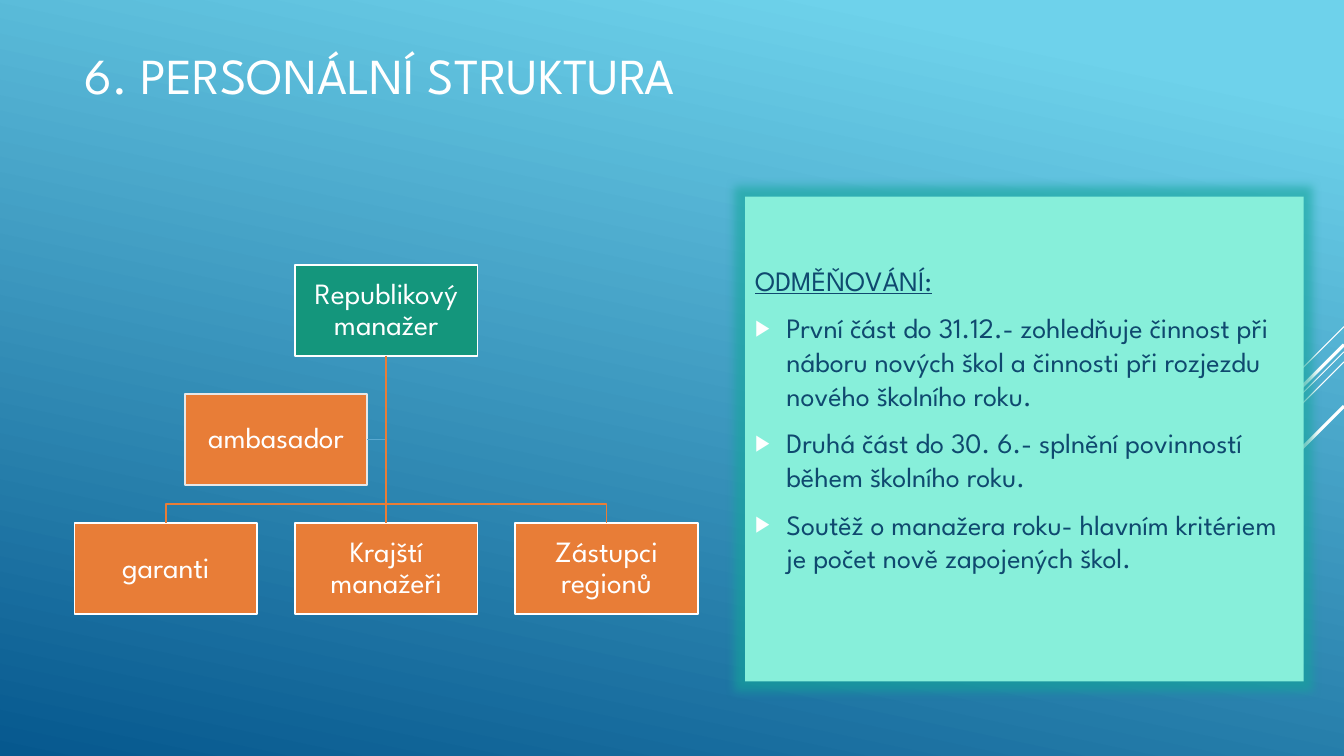
from lxml import etree
from pptx import Presentation
from pptx.dml.color import RGBColor
from pptx.enum.shapes import MSO_CONNECTOR, MSO_SHAPE
from pptx.enum.text import MSO_ANCHOR, MSO_AUTO_SIZE, PP_ALIGN
from pptx.oxml.ns import qn
from pptx.util import Emu, Inches, Pt

STRAIGHT = MSO_CONNECTOR.STRAIGHT
RECT = MSO_SHAPE.RECTANGLE
MIDDLE = MSO_ANCHOR.MIDDLE
LEFT, CENTER = PP_ALIGN.LEFT, PP_ALIGN.CENTER
NO_FIT = MSO_AUTO_SIZE.NONE
TOP, LEFT_SIDE, BOTTOM, RIGHT_SIDE = range(4)

FONT = "League Spartan"
COLORS = {
    "sky": "6ED2EB", "deep": "06588E", "white": "FFFFFF", "pale": "E7E7E7",
    "orange": "E87D37", "green": "14967C", "mint": "87EFDA",
    "navy": "0F496F", "stub": "5AA9D0", "glow": "14A69A",
}
RAYS = [
    (3.24, 1.0, 0.75), (3.49, 3.26, 0.75), (3.59, 2.07, 0.75),
    (3.42, 1.91, 2.25), (4.03, 1.39, 2.25),
]
REWARDS = [
    "ODMĚŇOVÁNÍ:",
    "První část do 31.12.- zohledňuje činnost při náboru nových škol "
    "a činnosti při rozjezdu nového školního roku.",
    "Druhá část do 30. 6.- splnění povinností během školního roku.",
    "Soutěž o manažera roku- hlavním kritériem je počet nově zapojených škol.",
]


def rgb(name):
    """Return the named palette colour."""
    return RGBColor.from_string(COLORS[name])


def sub(parent, tag, **attrs):
    """Append an XML child with the given attributes."""
    el = etree.SubElement(parent, qn(tag))
    for key, value in attrs.items():
        el.set(key, value)
    return el


def style_text(p, size, color):
    """Format every run of a paragraph."""
    for r in p.runs:
        r.font.name = FONT
        r.font.size = Pt(size)
        r.font.color.rgb = rgb(color)


def style_line(s, color, width):
    """Set the colour and width of an outline."""
    s.line.color.rgb = rgb(color)
    s.line.width = Pt(width)


def add_line(slide, start, end, color, width):
    """Draw a straight connector without a shadow."""
    s = slide.shapes.add_connector(STRAIGHT, *start, *end)
    style_line(s, color, width)
    sub(s._element.spPr, "a:effectLst")
    return s


def place_on_top(slide, s, x, y, w, h):
    """Move a placeholder to a box, in front of everything drawn so far."""
    s.left, s.top, s.width, s.height = x, y, w, h
    slide.shapes._spTree.append(s._element)


def add_background(slide, right):
    """Fill the background and draw diagonal rays from the right edge."""
    fill = slide.background.fill
    fill.gradient()
    fill.gradient_angle = 258
    for stop, color, pos in zip(fill.gradient_stops, ("sky", "deep"), (0.1, 1)):
        stop.color.rgb = rgb(color)
        stop.position = pos
    for y, reach, width in RAYS:
        add_line(slide, (right, Inches(y)),
                 (right - Inches(reach), Inches(y + reach)), "white", width)


def add_title(slide, x, y, w, h):
    """Fill the title placeholder."""
    s = slide.shapes.title
    place_on_top(slide, s, x, y, w, h)
    tf = s.text_frame
    tf.text = "6. PERSONÁLNÍ STRUKTURA"
    tf.auto_size = NO_FIT
    tf.vertical_anchor = MIDDLE
    tf.paragraphs[0].alignment = LEFT
    style_text(tf.paragraphs[0], 36, "white")


def add_role(slide, text, x, y, w, h, fill="orange", line="white"):
    """Add one box of the chart."""
    s = slide.shapes.add_shape(RECT, x, y, w, h)
    s.shadow.inherit = False
    s.fill.solid()
    s.fill.fore_color.rgb = rgb(fill)
    style_line(s, line, 1.25)
    tf = s.text_frame
    tf.word_wrap = True
    tf.vertical_anchor = MIDDLE
    tf.margin_left = tf.margin_right = Inches(0.01)
    tf.margin_top = tf.margin_bottom = Inches(0.01)
    p = tf.paragraphs[0]
    p.text = text
    p.alignment = CENTER
    p.line_spacing = 0.9
    style_text(p, 21, "white")
    return s


def add_branch(slide, parent, child, drop):
    """Draw a bent line from a parent to an outer child."""
    x1, y1 = parent.left + parent.width // 2, parent.top + parent.height
    x2, y2 = child.left + child.width // 2, child.top
    fb = slide.shapes.build_freeform(x1, y1)
    fb.add_line_segments([(x1, y2 - drop), (x2, y2 - drop), (x2, y2)], close=False)
    s = fb.convert_to_shape()
    s.shadow.inherit = False
    s.fill.background()
    style_line(s, "orange", 1.25)


def add_org_chart(slide, x, y, w, h):
    """Place three levels of roles in a box and join them."""
    bw, bh = Inches(1.81), Inches(0.9)
    step_x, step_y = Emu((w - bw) // 2), Emu((h - bh) // 2)
    bottom = y + 2 * step_y
    manager = add_role(slide, "Republikový manažer", x + step_x, y, bw, bh, "green")
    aide = add_role(slide, "ambasador", x + step_x // 2, y + step_y, bw, bh,
                    line="pale")
    left, mid, right = [
        add_role(slide, text, x + i * step_x, bottom, bw, bh)
        for i, text in enumerate(("garanti", "Krajští manažeři", "Zástupci regionů"))
    ]
    trunk_x = x + w // 2
    aide_y = aide.top + bh // 2
    stub = add_line(slide, (aide.left + bw, aide_y), (trunk_x, aide_y), "stub", 0.5)
    stub.begin_connect(aide, RIGHT_SIDE)
    for child in (left, right):
        add_branch(slide, manager, child, Inches(0.19))
    trunk = add_line(slide, (trunk_x, y + bh), (trunk_x, bottom), "orange", 1.25)
    trunk.begin_connect(manager, BOTTOM)
    trunk.end_connect(mid, TOP)


def add_bullet(p):
    """Give a paragraph a hanging white triangle."""
    pPr = p._p.get_or_add_pPr()
    indent = Inches(0.31)
    pPr.set("marL", str(indent))
    pPr.set("indent", str(-indent))
    sub(sub(pPr, "a:buClr"), "a:srgbClr", val=COLORS["white"])
    sub(pPr, "a:buSzPct", val="80000")
    sub(pPr, "a:buChar", char="▶")


def add_rewards(slide, x, y, w, h):
    """Fill the body placeholder as a glowing panel."""
    s = slide.placeholders[1]
    place_on_top(slide, s, x, y, w, h)
    s.fill.solid()
    s.fill.fore_color.rgb = rgb("mint")
    s.line.fill.background()
    glow = sub(sub(s._element.spPr, "a:effectLst"), "a:glow", rad=str(Inches(0.2)))
    sub(sub(glow, "a:srgbClr", val=COLORS["glow"]), "a:alpha", val="60000")
    tf = s.text_frame
    tf.text = "\n".join(REWARDS)
    tf.auto_size = NO_FIT
    tf.vertical_anchor = MIDDLE
    tf.margin_bottom = Inches(0.45)
    for p in tf.paragraphs:
        p.space_before, p.space_after = Pt(4), Pt(6)
        style_text(p, 20, "navy")
    heading, *items = tf.paragraphs
    heading.runs[0].font.underline = True
    pPr = heading._p.get_or_add_pPr()
    pPr.set("marL", "0")
    pPr.set("indent", "0")
    sub(pPr, "a:buNone")
    for p in items:
        add_bullet(p)


def main():
    """Build and save the slide."""
    prs = Presentation()
    prs.slide_width, prs.slide_height = Inches(13.33), Inches(7.5)
    slide = prs.slides.add_slide(prs.slide_layouts[1])
    add_background(slide, prs.slide_width)
    add_title(slide, Inches(0.74), Inches(0.22), Inches(9.34), Inches(1.04))
    add_org_chart(slide, Inches(0.74), Inches(2.63), Inches(6.18), Inches(3.46))
    add_rewards(slide, Inches(7.39), Inches(1.95), Inches(5.54), Inches(4.81))
    prs.save("out.pptx")


if __name__ == "__main__":
    main()
